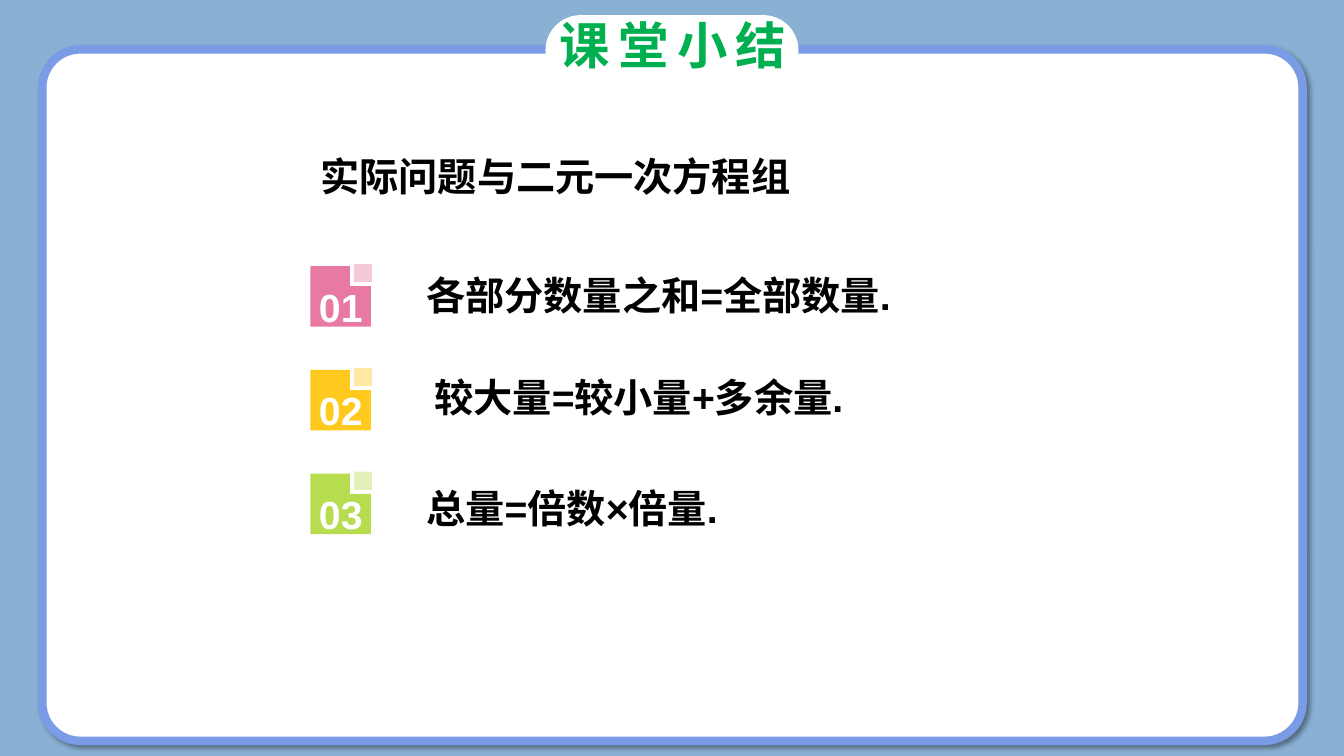
import pptx
import pptx.util
import pptx.dml.color
import pptx.enum.shapes
import pptx.enum.text
import pptx.oxml
import pptx.oxml.ns
from pptx.util import Inches

COLORS = {
    "background": "8AB1D4", "panel": "FFFFFF", "border": "7A9BE6",
    "title": "00B050", "text": "000000", "number": "FFFFFF",
}
POINTS = [
    ("各部分数量之和=全部数量.", 4.13, 2.64, "E779A3", "F5C9DA"),
    ("较大量=较小量+多余量.", 4.21, 3.65, "FFC91D", "FFE9A5"),
    ("总量=倍数×倍量.", 4.13, 4.76, "B7DC50", "E2F1B9"),
]
BADGE_LEFT, BADGE_TOP, BADGE_STEP = 3.08, 2.64, 1.03
BADGE_OUTLINE = [(0.39, 0), (0.39, 0.2), (0.6, 0.2), (0.6, 0.6), (0, 0.6)]
ANCHOR = pptx.enum.text.MSO_ANCHOR
ALIGN = pptx.enum.text.PP_ALIGN


def write(shape, text, size, color, font="Arial", align=ALIGN.LEFT, anchor=ANCHOR.TOP):
    frame = shape.text_frame
    frame.word_wrap = True
    frame.auto_size = pptx.enum.text.MSO_AUTO_SIZE.NONE
    frame.vertical_anchor = anchor
    para = frame.paragraphs[0]
    para.text = text
    para.alignment = align
    para.font.name = font
    para.font.size = pptx.util.Pt(size)
    para.font.bold = True
    para.font.color.rgb = pptx.dml.color.RGBColor.from_string(color)
    return para


def paint(shape, color):
    shape.shadow.inherit = False
    shape.fill.solid()
    shape.fill.fore_color.rgb = pptx.dml.color.RGBColor.from_string(color)
    shape.line.fill.background()


deck = pptx.Presentation()
deck.slide_width = Inches(13.33)
deck.slide_height = Inches(7.5)
page = deck.slides.add_slide(deck.slide_layouts[5])
page.background.fill.solid()
page.background.fill.fore_color.rgb = pptx.dml.color.RGBColor.from_string(COLORS["background"])

ROUNDED = pptx.enum.shapes.MSO_SHAPE.ROUNDED_RECTANGLE
panel = page.shapes.add_shape(ROUNDED, Inches(0.42), Inches(0.49), Inches(12.5), Inches(6.86))
panel.adjustments[0] = 0.055
paint(panel, COLORS["panel"])
panel.line.color.rgb = pptx.dml.color.RGBColor.from_string(COLORS["border"])
panel.line.width = pptx.util.Pt(6)
effects = panel.element.spPr.find(pptx.oxml.ns.qn("a:effectLst"))
effects.append(pptx.oxml.parse_xml(
    f'<a:outerShdw {pptx.oxml.ns.nsdecls("a")} blurRad="50800" dist="38100" dir="2700000" algn="tl">'
    '<a:srgbClr val="000000"><a:alpha val="40000"/></a:srgbClr></a:outerShdw>'
))

tab = page.shapes.add_shape(ROUNDED, Inches(5.41), Inches(0.15), Inches(2.51), Inches(0.7))
tab.adjustments[0] = 0.5
paint(tab, COLORS["panel"])

topic = page.shapes.add_textbox(Inches(3.08), Inches(1.46), Inches(6.93), Inches(0.57))
write(topic, "实际问题与二元一次方程组", 28, COLORS["text"], font="Times New Roman")

for index, (text, left, top, color, tint) in enumerate(POINTS):
    box = page.shapes.add_textbox(Inches(left), Inches(top), Inches(5.6), Inches(0.57))
    write(box, text, 28, COLORS["text"])

    badge_top = BADGE_TOP + index * BADGE_STEP
    group = page.shapes.add_group_shape()
    outline = group.shapes.build_freeform(Inches(BADGE_LEFT), Inches(badge_top))
    outline.add_line_segments(
        [(Inches(BADGE_LEFT + x), Inches(badge_top + y)) for x, y in BADGE_OUTLINE], close=True
    )
    badge = outline.convert_to_shape()
    paint(badge, color)
    write(badge, f"{index + 1:02d}", 28, COLORS["number"], align=ALIGN.CENTER, anchor=ANCHOR.MIDDLE)
    frame = badge.text_frame
    frame.margin_left = frame.margin_right = frame.margin_bottom = 0
    frame.margin_top = Inches(0.2)

    corner = group.shapes.add_shape(
        pptx.enum.shapes.MSO_SHAPE.RECTANGLE,
        Inches(3.51), Inches(badge_top - 0.02), Inches(0.18), Inches(0.18),
    )
    paint(corner, tint)

title = page.shapes.title
title.left, title.top = Inches(5.45), Inches(0.09)
title.width, title.height = Inches(3.03), Inches(0.71)
heading = write(title, "课堂小结", 36, COLORS["title"])
heading.runs[0].font.language_id = pptx.enum.lang.MSO_LANGUAGE_ID.SIMPLIFIED_CHINESE
heading.runs[0].font._element.set("spc", "600")
page.shapes.element.append(title.element)

deck.save("out.pptx")
